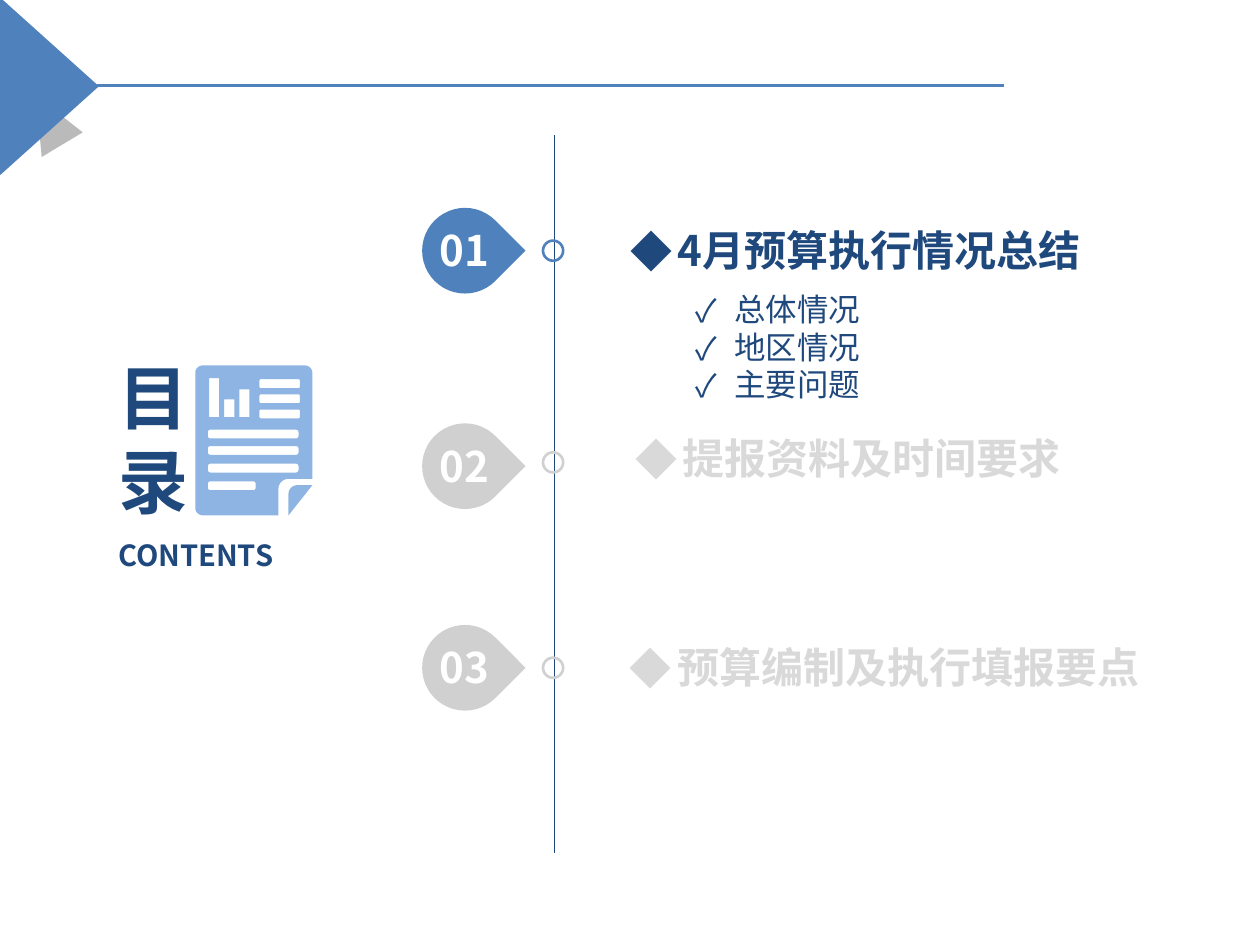
from dataclasses import dataclass
from math import cos, radians, sin

from lxml.etree import SubElement
from pptx import Presentation
from pptx.dml.color import RGBColor
from pptx.enum.shapes import MSO_CONNECTOR, MSO_SHAPE
from pptx.enum.text import MSO_ANCHOR, MSO_AUTO_SIZE, PP_ALIGN
from pptx.oxml.ns import qn
from pptx.util import Inches, Pt

FONT = "Noto Sans CJK SC"
BLUE = "4F81BD"
NAVY = "1F497D"
SKY = "8EB4E3"
GREY = "D0D0D0"
PALE = "D9D9D9"
WHITE = "FFFFFF"

Point = tuple[float, float]
Area = tuple[float, float, float, float]


@dataclass
class Stage:
    number: str
    heading: str
    drop_top: float
    ring_top: float
    heading_area: Area
    drop_color: str
    heading_color: str


@dataclass
class Bar:
    left: float
    top: float
    right: float
    bottom: float
    radius: float = 0


STAGES = [
    Stage("01", "4月预算执行情况总结", 1.65, 1.91, (5, 1.98, 1.38, 0.2), BLUE, NAVY),
    Stage("02", "提报资料及时间要求", 3.36, 3.59, (5.04, 3.63, 1.38, 0.2), GREY, PALE),
    Stage("03", "预算编制及执行填报要点", 4.96, 5.22, (5, 5.01, 2.04, 0.48), GREY, PALE),
]
TOPICS = ["总体情况", "地区情况", "主要问题"]

CHART_BARS = [Bar(1.66 + 0.12 * index, top, 1.74 + 0.12 * index, 3.31)
              for index, top in enumerate([3, 3.17, 3.09])]
SHORT_LINES = [Bar(2.06, 3.01 + 0.12 * index, 2.38, 3.08 + 0.12 * index, 0.01) for index in range(3)]
LONG_LINES = [Bar(1.65, top, right, top + 0.07, 0.02)
              for top, right in [(3.41, 2.37), (3.54, 2.37), (3.68, 2.37), (3.82, 2.03)]]


def color(value: str) -> RGBColor:
    return RGBColor.from_string(value)


def add_figure(page, kind, area: Area, fill: str | None = None,
               outline: str | None = None, rotation: float = 0):
    figure = page.shapes.add_shape(kind, *map(Inches, area))
    figure.shadow.inherit = False
    figure.rotation = rotation
    if fill:
        figure.fill.solid()
        figure.fill.fore_color.rgb = color(fill)
    else:
        figure.fill.background()
    if outline:
        figure.line.color.rgb = color(outline)
        figure.line.width = Pt(1.5)
    else:
        figure.line.fill.background()
    return figure


def add_rule(page, start: Point, end: Point, shade: str, width: float) -> None:
    rule = page.shapes.add_connector(MSO_CONNECTOR.STRAIGHT, *map(Inches, start + end))
    rule.line.color.rgb = color(shade)
    rule.line.width = Pt(width)
    SubElement(rule._element.spPr, qn("a:effectLst"))


def write(para, text: str, size: float, shade: str, bold: bool = True) -> None:
    span = para.add_run()
    span.text = text
    span.font.name = FONT
    span.font.size = Pt(size)
    span.font.bold = bold
    span.font.color.rgb = color(shade)
    SubElement(span._r.get_or_add_rPr(), qn("a:ea")).set("typeface", FONT)


def add_bullet(para, symbol: str, indent: float) -> None:
    properties = para._p.get_or_add_pPr()
    properties.set("marL", str(Inches(indent)))
    properties.set("indent", str(-Inches(indent)))
    SubElement(properties, qn("a:buFont")).set("typeface", FONT)
    SubElement(properties, qn("a:buChar")).set("char", symbol)


def set_frame(frame, anchor, wrap: bool, margin: float = 0) -> None:
    frame.auto_size = MSO_AUTO_SIZE.NONE
    frame.word_wrap = wrap
    frame.vertical_anchor = anchor
    frame.margin_left = frame.margin_right = Inches(margin)
    frame.margin_top = frame.margin_bottom = Inches(margin / 2)


def add_text_frame(page, area: Area, anchor, wrap: bool, margin: float = 0):
    frame = page.shapes.add_textbox(*map(Inches, area)).text_frame
    set_frame(frame, anchor, wrap, margin)
    return frame


def add_stage(page, stage: Stage) -> None:
    add_figure(page, MSO_SHAPE.OVAL, (4.31, stage.ring_top, 0.16, 0.16), outline=stage.drop_color)
    add_figure(page, MSO_SHAPE.TEAR, (3.35, stage.drop_top, 0.68, 0.68), stage.drop_color, rotation=45)
    badge = add_figure(page, MSO_SHAPE.OVAL, (3.36, stage.drop_top + 0.01, 0.65, 0.65), stage.drop_color)
    set_frame(badge.text_frame, MSO_ANCHOR.MIDDLE, False, 0.1)
    para = badge.text_frame.paragraphs[0]
    para.alignment = PP_ALIGN.CENTER
    write(para, stage.number, 24, WHITE)
    para = add_text_frame(page, stage.heading_area, MSO_ANCHOR.BOTTOM, False).paragraphs[0]
    add_bullet(para, "◆", 0.38)
    write(para, stage.heading, 24, stage.heading_color)


def arc(center: Point, radius: float, start: int, end: int) -> list[Point]:
    steps = 6
    angles = [radians(start + (end - start) * step / steps) for step in range(steps + 1)]
    return [(center[0] + radius * cos(angle), center[1] + radius * sin(angle)) for angle in angles]


def bar_outline(bar: Bar) -> list[Point]:
    radius = bar.radius
    left, right = bar.left + radius, bar.right - radius
    top, bottom = bar.top + radius, bar.bottom - radius
    if not radius:
        return [(left, top), (right, top), (right, bottom), (left, bottom)]
    return (arc((left, top), radius, 180, 270) + arc((right, top), radius, 270, 360)
            + arc((right, bottom), radius, 0, 90) + arc((left, bottom), radius, 90, 180))


def add_report_icon(page) -> None:
    sheet = (arc((1.61, 2.96), 0.06, 180, 270) + arc((2.42, 2.96), 0.06, 270, 360)
             + [(2.48, 3.8)] + arc((2.29, 3.88), 0.08, 270, 180)
             + [(2.21, 4.09)] + arc((1.61, 4.03), 0.06, 90, 180))
    fold = [(2.48, 3.85), (2.29, 4.09)] + arc((2.36, 3.92), 0.07, 180, 270)
    holes = [bar_outline(bar) for bar in CHART_BARS + SHORT_LINES + LONG_LINES]
    contours = [[(Inches(x), Inches(y)) for x, y in contour] for contour in [sheet, fold, *holes]]
    builder = page.shapes.build_freeform(*contours[0][0])
    builder.add_line_segments(contours[0][1:])
    for contour in contours[1:]:
        builder.move_to(*contour[0])
        builder.add_line_segments(contour[1:])
    icon = builder.convert_to_shape()
    icon.shadow.inherit = False
    icon.fill.solid()
    icon.fill.fore_color.rgb = color(SKY)
    icon.line.fill.background()


def add_title(page) -> None:
    title = page.shapes.title
    title.left, title.top, title.width, title.height = map(Inches, (0.94, 2.81, 0.49, 1.38))
    set_frame(title.text_frame, MSO_ANCHOR.TOP, True)
    para = title.text_frame.paragraphs[0]
    para.alignment = PP_ALIGN.CENTER
    write(para, "目录", 40, NAVY)
    para = add_text_frame(page, (0.94, 4.27, 1.54, 0.27), MSO_ANCHOR.MIDDLE, True).paragraphs[0]
    para.alignment = PP_ALIGN.JUSTIFY
    write(para, "CONTENTS", 16.6, NAVY)


def add_topics(page) -> None:
    frame = add_text_frame(page, (5.42, 2.25, 1.68, 1.01), MSO_ANCHOR.TOP, False, 0.1)
    frame.auto_size = MSO_AUTO_SIZE.SHAPE_TO_FIT_TEXT
    for index, topic in enumerate(TOPICS):
        para = frame.add_paragraph() if index else frame.paragraphs[0]
        add_bullet(para, "✓", 0.31)
        write(para, topic, 18, NAVY, bold=False)


def add_corner(page) -> None:
    shade = add_figure(page, MSO_SHAPE.ISOSCELES_TRIANGLE, (0.19, 0.74, 0.38, 0.44), "404040", rotation=329)
    shade.adjustments[0] = 0.56
    tint = shade._element.spPr.find(qn("a:solidFill"))[0]
    SubElement(tint, qn("a:alpha")).set("val", "36000")
    add_figure(page, MSO_SHAPE.ISOSCELES_TRIANGLE, (-0.32, 0.29, 1.42, 0.79), BLUE, rotation=90)
    add_rule(page, (0.77, 0.68), (7.97, 0.68), BLUE, 2)


def main() -> None:
    deck = Presentation()
    deck.slide_width, deck.slide_height = Inches(10), Inches(7.5)
    page = deck.slides.add_slide(deck.slide_layouts[5])
    add_corner(page)
    add_rule(page, (4.4, 1.07), (4.4, 6.77), NAVY, 0.75)
    for stage in STAGES:
        add_stage(page, stage)
    add_title(page)
    add_report_icon(page)
    add_topics(page)
    deck.save("out.pptx")


if __name__ == "__main__":
    main()
